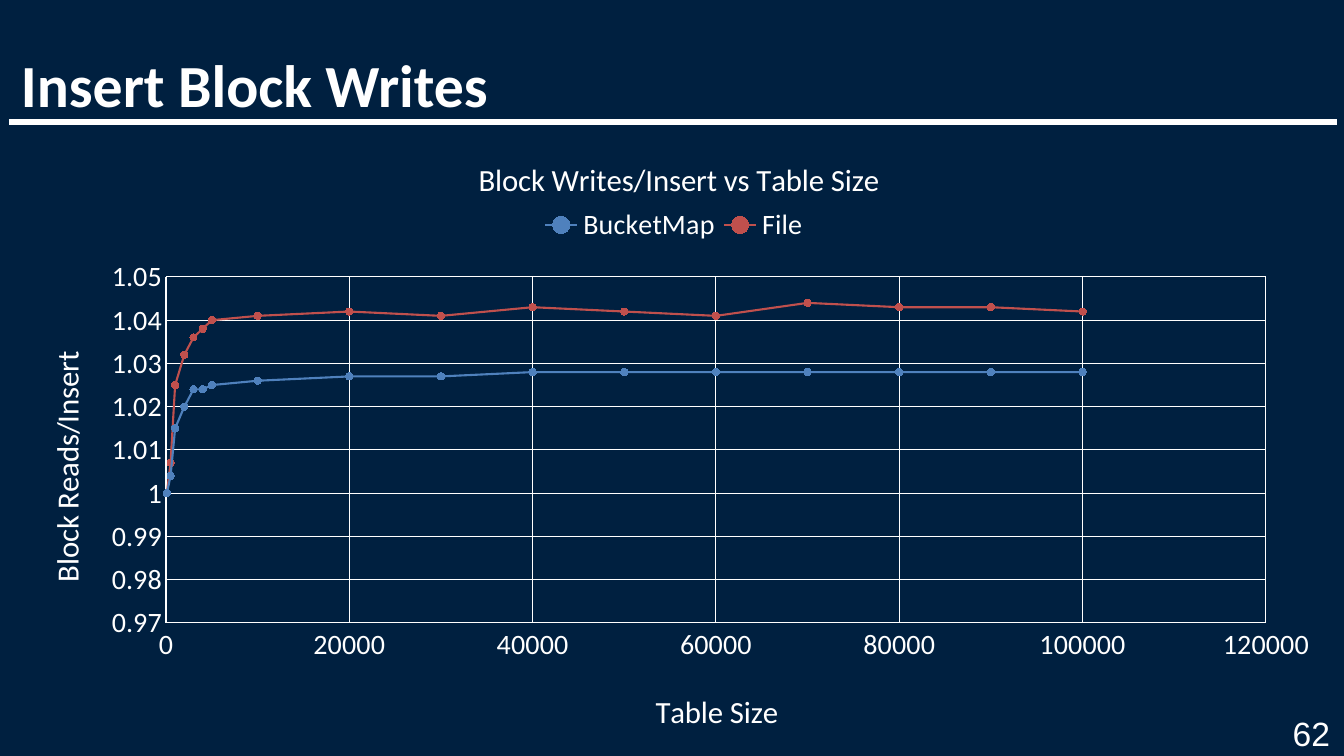
from lxml.etree import SubElement
from pptx import Presentation
from pptx.chart.data import XyChartData
from pptx.dml.color import RGBColor
from pptx.enum.chart import XL_CHART_TYPE, XL_LEGEND_POSITION, XL_MARKER_STYLE, XL_TICK_MARK
from pptx.enum.shapes import MSO_CONNECTOR
from pptx.enum.text import MSO_ANCHOR, PP_ALIGN
from pptx.oxml.ns import qn
from pptx.oxml.xmlchemy import OxmlElement
from pptx.util import Pt

SCALE = 12192000 / 1344
WHITE = "FFFFFF"
TABLE_SIZES = [100, 500, *range(1000, 6000, 1000), *range(10000, 110000, 10000)]
SERIES = [
    ("BucketMap", "4F81BD",
     [1, 1.004, 1.015, 1.02, 1.024, 1.024, 1.025, 1.026, 1.027, 1.027,
      1.028, 1.028, 1.028, 1.028, 1.028, 1.028, 1.028]),
    ("File", "C0504D",
     [1, 1.007, 1.025, 1.032, 1.036, 1.038, 1.04, 1.041, 1.042, 1.041,
      1.043, 1.042, 1.041, 1.044, 1.043, 1.043, 1.042]),
]


def px(n):
    return round(n * SCALE)


def rgb(color):
    return RGBColor.from_string(color)


def set_font(font, size, name="Calibri", bold=False):
    font.size = Pt(size)
    font.name = name
    font.bold = bold
    font.color.rgb = rgb(WHITE)


def set_line(line, color, width):
    line.color.rgb = rgb(color)
    line.width = Pt(width)


def add_text(s, box, text, size, name="Calibri", bold=False, inset=0,
             anchor=MSO_ANCHOR.TOP, align=PP_ALIGN.LEFT, spacing=1.0):
    tf = s.shapes.add_textbox(*map(px, box)).text_frame
    tf.word_wrap = True
    tf.vertical_anchor = anchor
    tf.margin_left = tf.margin_right = px(inset)
    tf.margin_top = tf.margin_bottom = 0
    p = tf.paragraphs[0]
    p.text = text
    p.alignment = align
    p.line_spacing = spacing
    set_font(p.font, size, name, bold)


def add_header(s, box):
    x, y, w, h = box
    add_text(s, box, "Insert Block Writes", 42.7, bold=True, inset=10,
             anchor=MSO_ANCHOR.BOTTOM, spacing=0.89)
    rule = s.shapes.add_connector(
        MSO_CONNECTOR.STRAIGHT, px(x - 2), px(y + h + 2), px(x + w + 5), px(y + h + 2))
    set_line(rule.line, WHITE, 3.75)
    SubElement(rule._element.spPr, qn("a:effectLst"))


def place(element, index, x, y, w=None, h=None, inner=False):
    for old in element.findall(qn("c:layout")):
        element.remove(old)
    layout = OxmlElement("c:layout")
    element.insert(index, layout)
    manual = SubElement(layout, qn("c:manualLayout"))
    settings = [("layoutTarget", "inner")] if inner else []
    settings += [("xMode", "edge"), ("yMode", "edge"), ("x", x), ("y", y)]
    if w is not None:
        settings += [("w", w), ("h", h)]
    for tag, val in settings:
        SubElement(manual, qn("c:" + tag)).set("val", str(val))


def set_title(title, text, x, y):
    p = title.text_frame.paragraphs[0]
    p.text = text
    set_font(p.font, 22)
    place(title._element, 1, x, y)


def style_axis(axis, low, high, step, number_format):
    axis.minimum_scale, axis.maximum_scale, axis.major_unit = low, high, step
    axis.major_tick_mark = axis.minor_tick_mark = XL_TICK_MARK.NONE
    axis.has_major_gridlines = True
    set_line(axis.major_gridlines.format.line, WHITE, 0.75)
    set_line(axis.format.line, WHITE, 0.75)
    labels = axis.tick_labels
    labels.number_format = number_format
    labels.number_format_is_linked = False
    set_font(labels.font, 20)


def add_writes_chart(s, box):
    w, h = box[2:]
    data = XyChartData()
    for name, _, values in SERIES:
        series = data.add_series(name)
        for size, value in zip(TABLE_SIZES, values):
            series.add_data_point(size, value)
    chart = s.shapes.add_chart(XL_CHART_TYPE.XY_SCATTER_SMOOTH, *map(px, box), data).chart
    set_font(chart.font, 10)
    plot = chart.plots[0]
    plot.vary_by_categories = False
    for series, (_, color, _) in zip(plot.series, SERIES):
        set_line(series.format.line, color, 1.5)
        series.smooth = True
        marker = series.marker
        marker.style = XL_MARKER_STYLE.CIRCLE
        marker.size = 5
        marker.format.fill.solid()
        marker.format.fill.fore_color.rgb = rgb(color)
        marker.format.line.color.rgb = rgb(color)

    style_axis(chart.category_axis, 0, 120000, 20000, "General")
    style_axis(chart.value_axis, 0.97, 1.05, 0.01, "General")
    chart.has_title = True
    set_title(chart.chart_title, "Block Writes/Insert vs Table Size", 462 / w, 24 / h)
    set_title(chart.category_axis.axis_title, "Table Size", 639 / w, 556 / h)
    value_title = chart.value_axis.axis_title
    set_title(value_title, "Block Reads/Insert", 29 / w, 217 / h)
    body = value_title._element.find(".//" + qn("a:bodyPr"))
    body.set("rot", "-5400000")
    body.set("vert", "horz")

    chart.has_legend = True
    legend = chart.legend
    legend.position = XL_LEGEND_POSITION.TOP
    legend.include_in_layout = False
    set_font(legend.font, 20)
    place(legend._element, 1, 525 / w, 76 / h, 276 / w, 40 / h)
    plot_area = chart._chartSpace.find(".//" + qn("c:plotArea"))
    place(plot_area, 0, 155 / w, 148 / h, 1100 / w, 346 / h, inner=True)


def main():
    prs = Presentation()
    prs.slide_width, prs.slide_height = px(1344), px(756)
    s = prs.slides.add_slide(prs.slide_layouts[6])
    s.background.fill.solid()
    s.background.fill.fore_color.rgb = rgb("002040")
    add_header(s, (11, 0, 1321, 120))
    add_writes_chart(s, (11, 129, 1326, 619))
    add_text(s, (1286, 713, 44, 28), "62", 24, name="Arial", align=PP_ALIGN.RIGHT)
    prs.save("out.pptx")


if __name__ == "__main__":
    main()
